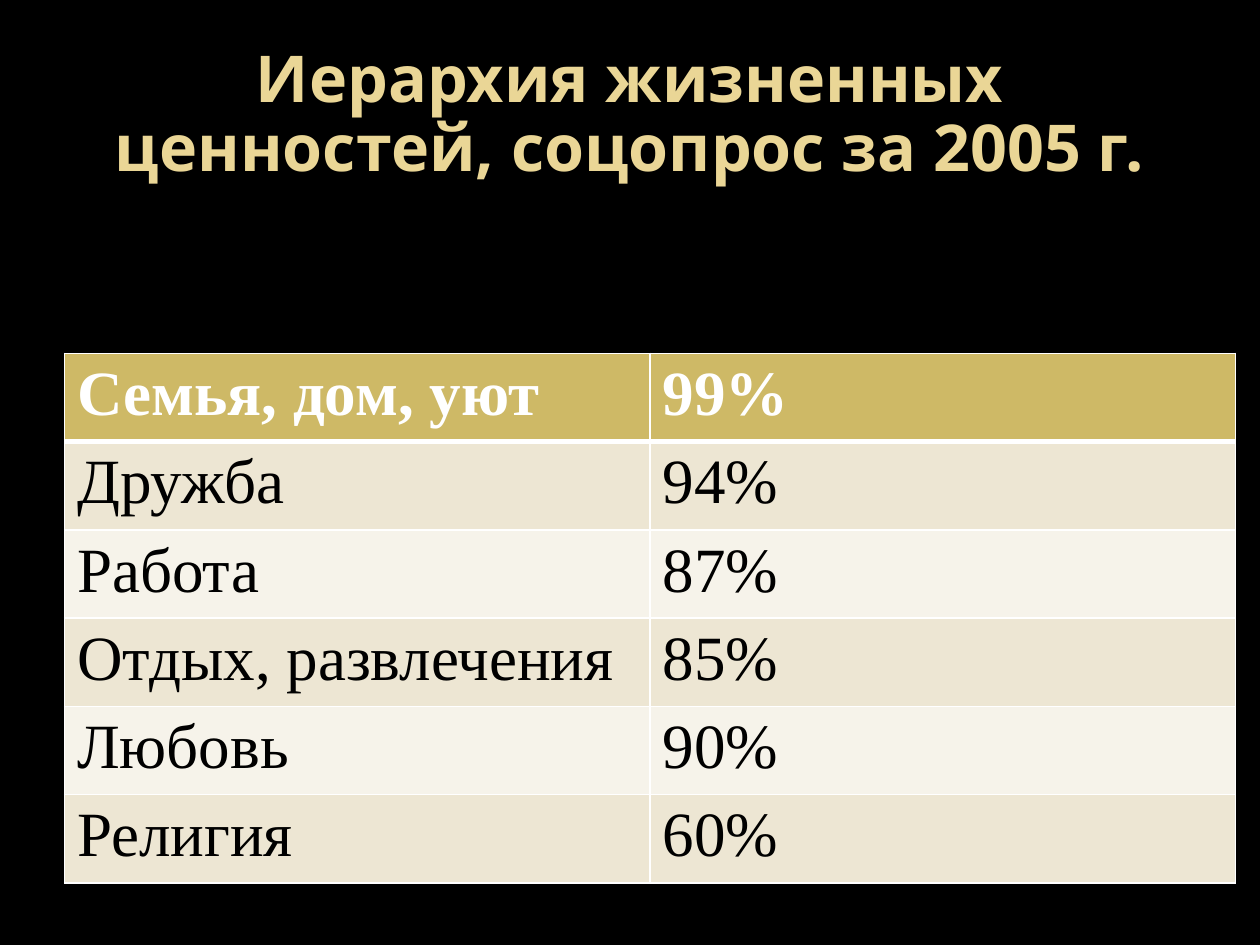
from dataclasses import dataclass

from lxml import etree
from pptx import Presentation
from pptx.dml.color import RGBColor as RGB
from pptx.enum.text import MSO_ANCHOR as Anchor, PP_ALIGN as Align
from pptx.oxml.ns import qn
from pptx.util import Pt


@dataclass(frozen=True)
class Theme:
    background: str = "000000"
    title: str = "EAD696"
    header: str = "CEB966"
    bands: tuple = ("EDE6D3", "F6F3EA")
    light: str = "FFFFFF"
    dark: str = "000000"
    title_font: str = "Open Sans"
    table_font: str = "Times New Roman"
    title_size: float = 36.9
    table_size: float = 36


T = Theme()


def write(tf, text, font, size, color, bold=False, align=Align.LEFT, spacing=None):
    p = tf.paragraphs[0]
    p.alignment = align
    p.line_spacing = spacing
    r = p.add_run()
    r.text = text
    r.font.name, r.font.size, r.font.bold = font, Pt(size), bold
    r.font.color.rgb = RGB.from_string(color)


def add_border(cell, side, width):
    ln = etree.SubElement(cell._tc.get_or_add_tcPr(), qn(f"a:ln{side}"), w=str(Pt(width)))
    fill = etree.SubElement(ln, qn("a:solidFill"))
    etree.SubElement(fill, qn("a:srgbClr"), val=T.light)


# Slide
prs = Presentation()
prs.slide_width, prs.slide_height = Pt(720), Pt(540)
s = prs.slides.add_slide(prs.slide_layouts[6])
s.background.fill.solid()
s.background.fill.fore_color.rgb = RGB.from_string(T.background)

# Title
tf = s.shapes.add_textbox(Pt(36), Pt(21.6), Pt(648), Pt(90)).text_frame
tf.word_wrap = True
tf.vertical_anchor = Anchor.MIDDLE
write(tf, "Иерархия жизненных ценностей, соцопрос за 2005 г.", T.title_font,
      T.title_size, T.title, bold=True, align=Align.CENTER, spacing=0.89)

# Table of values
values = [
    ("Семья, дом, уют", "99%"),
    ("Дружба", "94%"),
    ("Работа", "87%"),
    ("Отдых, развлечения", "85%"),
    ("Любовь", "90%"),
    ("Религия", "60%"),
]
table = s.shapes.add_table(len(values), 2, Pt(36.9), Pt(201.9), Pt(669.2), Pt(255)).table

for i, row in enumerate(values):
    is_header = i == 0
    fill = T.header if is_header else T.bands[(i - 1) % 2]
    # A thick rule separates the header from the first band
    widths = {"L": 1, "R": 1, "T": 3 if i == 1 else 1, "B": 3 if is_header else 1}
    for j, text in enumerate(row):
        cell = table.cell(i, j)
        for side, width in widths.items():
            add_border(cell, side, width)
        cell.fill.solid()
        cell.fill.fore_color.rgb = RGB.from_string(fill)
        write(cell.text_frame, text, T.table_font, T.table_size,
              T.light if is_header else T.dark, bold=is_header)

prs.save("out.pptx")
